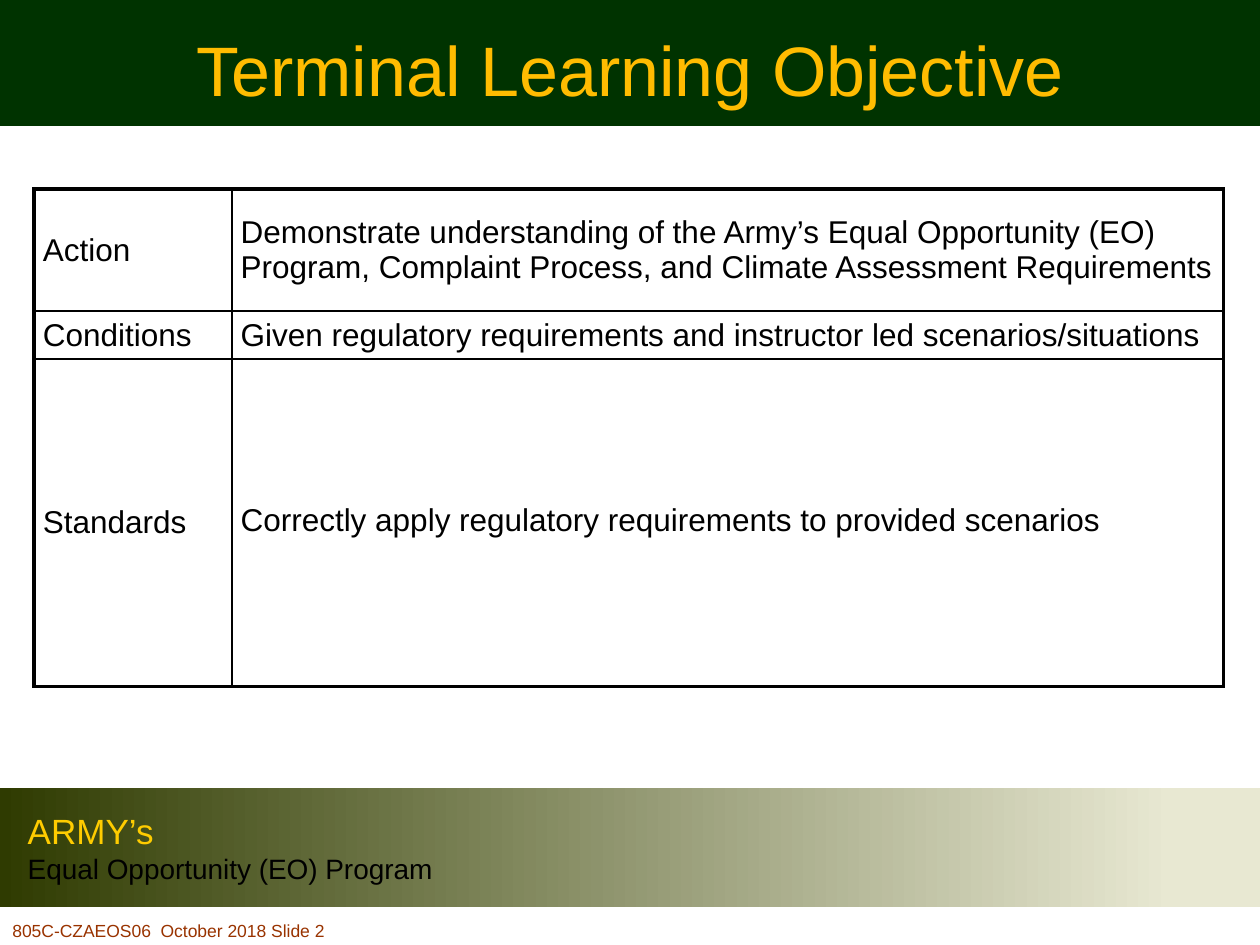
import pptx
import pptx.dml.color
import pptx.enum.shapes
import pptx.enum.text
import pptx.oxml.ns
import pptx.util
from lxml import etree
from pptx.util import Inches

COLORS = {
    "header": "003300",
    "title": "FFBC01",
    "band_dark": "2F3B01",
    "band_light": "E8E8D2",
    "band_title": "FFCC00",
    "text": "000000",
    "footer": "993300",
}
ALIGN = pptx.enum.text.PP_ALIGN
MIDDLE = pptx.enum.text.MSO_ANCHOR.MIDDLE
TOP = pptx.enum.text.MSO_ANCHOR.TOP


def rgb(name):
    return pptx.dml.color.RGBColor.from_string(COLORS[name])


class SlideBuilder:
    font_name = "Arial"
    thick, thin = 2.25, 1

    def __init__(self, slide):
        self.slide = slide

    def format_paragraph(self, paragraph, size, color, align=ALIGN.LEFT):
        paragraph.alignment = align
        for run in paragraph.runs:
            run.font.name = self.font_name
            run.font.size = pptx.util.Pt(size)
            run.font.color.rgb = rgb(color)

    def rectangle(self, left, top, width, height):
        shape = self.slide.shapes.add_shape(
            pptx.enum.shapes.MSO_SHAPE.RECTANGLE,
            Inches(left), Inches(top), Inches(width), Inches(height))
        shape.shadow.inherit = False
        shape.line.fill.background()
        return shape

    def solid_band(self, left, top, width, height, color):
        shape = self.rectangle(left, top, width, height)
        shape.fill.solid()
        shape.fill.fore_color.rgb = rgb(color)

    def gradient_band(self, left, top, width, height, stops, lines):
        shape = self.rectangle(left, top, width, height)
        shape.fill.gradient()
        shape.fill.gradient_angle = 0
        for stop, (position, color) in zip(shape.fill.gradient_stops, stops):
            stop.position = position
            stop.color.rgb = rgb(color)
        text_frame = shape.text_frame
        text_frame.margin_left = Inches(0.22)
        text_frame.vertical_anchor = MIDDLE
        text_frame.text = "\n".join(text for text, size, color in lines)
        for paragraph, (text, size, color) in zip(text_frame.paragraphs, lines):
            self.format_paragraph(paragraph, size, color)

    def text(self, left, top, width, height, text, size, color,
             align=ALIGN.LEFT, anchor=TOP):
        shape = self.slide.shapes.add_textbox(
            Inches(left), Inches(top), Inches(width), Inches(height))
        text_frame = shape.text_frame
        text_frame.word_wrap = True
        text_frame.vertical_anchor = anchor
        text_frame.text = text
        self.format_paragraph(text_frame.paragraphs[0], size, color, align)

    def cell_border(self, cell, side, width):
        properties = cell._tc.get_or_add_tcPr()
        line = etree.SubElement(properties, pptx.oxml.ns.qn(f"a:ln{side}"),
                                w=str(int(pptx.util.Pt(width))))
        fill = etree.SubElement(line, pptx.oxml.ns.qn("a:solidFill"))
        etree.SubElement(fill, pptx.oxml.ns.qn("a:srgbClr"), val=COLORS["text"])

    def table(self, left, top, column_widths, row_heights, rows, size):
        frame = self.slide.shapes.add_table(
            len(rows), len(column_widths), Inches(left), Inches(top),
            Inches(sum(column_widths)), Inches(sum(row_heights)))
        table = frame.table
        table.first_row = table.horz_banding = False
        for column, width in zip(table.columns, column_widths):
            column.width = Inches(width)
        for row, height in zip(table.rows, row_heights):
            row.height = Inches(height)
        last_row, last_column = len(rows) - 1, len(column_widths) - 1
        for row_index, row in enumerate(rows):
            for column_index, text in enumerate(row):
                cell = table.cell(row_index, column_index)
                cell.text = text
                cell.vertical_anchor = MIDDLE
                cell.margin_left = cell.margin_right = Inches(0.07)
                cell.margin_top = cell.margin_bottom = Inches(0.04)
                self.format_paragraph(cell.text_frame.paragraphs[0], size, "text")
                # Thick lines around the table, thin lines inside
                outer_sides = {
                    "L": column_index == 0,
                    "R": column_index == last_column,
                    "T": row_index == 0,
                    "B": row_index == last_row,
                }
                for side, outer in outer_sides.items():
                    self.cell_border(cell, side, self.thick if outer else self.thin)
                cell.fill.background()
        return table


def main():
    presentation = pptx.Presentation()
    presentation.slide_width = Inches(10)
    presentation.slide_height = Inches(7.5)
    builder = SlideBuilder(
        presentation.slides.add_slide(presentation.slide_layouts[6]))

    # Header and program band
    builder.solid_band(0, 0, 10, 1, "header")
    builder.gradient_band(
        0, 6.25, 10, 0.95,
        [(0, "band_dark"), (0.93, "band_light")],
        [("ARMY’s", 20, "band_title"),
         ("Equal Opportunity (EO) Program", 16, "text")])

    # Title
    builder.text(0.75, -0.08, 8.5, 1.25, "Terminal Learning Objective",
                 40, "title", ALIGN.CENTER, MIDDLE)

    # Objective table
    table = builder.table(
        0.27, 1.5, [1.57, 7.87], [0.97, 0.36, 2.6],
        [("Action", "Demonstrate understanding of the Army’s Equal Opportunity (EO) "
                    "Program, Complaint Process, and Climate Assessment Requirements"),
         ("Conditions", "Given regulatory requirements and instructor led "
                        "scenarios/situations"),
         ("Standards", "Correctly apply regulatory requirements to provided scenarios")],
        18)
    table.cell(2, 1).margin_top = 0

    # Footer
    builder.text(0, 7.25, 3.9, 0.25, "805C-CZAEOS06  October 2018 Slide 2",
                 10, "footer")

    presentation.save("out.pptx")


if __name__ == "__main__":
    main()
